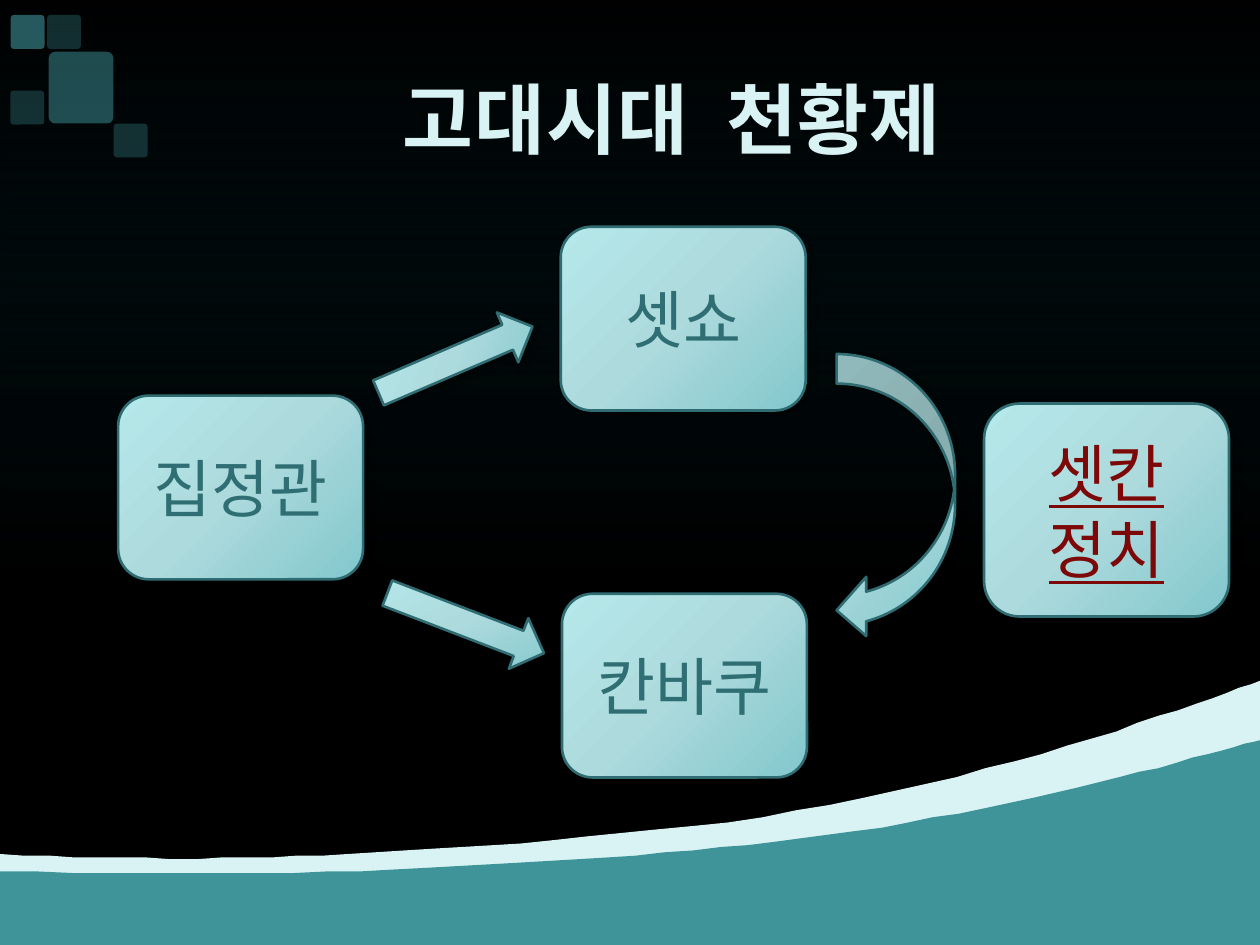
from typing import NamedTuple

from lxml import etree
from pptx import Presentation
from pptx.dml.color import RGBColor
from pptx.enum import shapes as sh, text as tx
from pptx.oxml import ns
from pptx.util import Pt

HUE = {
    "black": "000000", "deep": "005466", "pale": "D9F3F4", "teal": "3F949A",
    "light": "B5E8EA", "mid": "ACDADD", "dark": "82C7CC",
    "edge": "2F6D72", "ink": "2F6F74", "red": "7C0808",
}
KIND = sh.MSO_SHAPE
WIDE, HIGH = 720, 540
GLOSS = [(0, "light", 100), (50, "mid", 100), (100, "dark", 100)]


class Item(NamedTuple):
    kind: int
    x: float
    y: float
    w: float
    h: float
    turn: float = 0
    label: str = ""
    ink: str = "ink"


class Tile(NamedTuple):
    x: float
    y: float
    alpha: int
    w: float = 19.4
    h: float = 19.4


class Wave(NamedTuple):
    hue: str
    start: tuple
    curves: list


TILES = [
    Tile(26.9, 8.6, 30), Tile(5.9, 51.8, 30), Tile(6.1, 8.6, 60),
    Tile(65, 70.6, 30), Tile(27.8, 29.6, 50, 37, 41),
]
WAVES = [
    Wave("pale", (0, 488.2), [((115.9, 493.2), (211, 491), (375.1, 474.5)),
                              ((539.3, 457.9), (682.6, 402.5), (720, 388.8))]),
    Wave("teal", (0, 497.5), [((177.1, 503.3), (320.4, 493.9), (442.8, 481)),
                              ((564.5, 467.3), (690.5, 431.3), (720, 422.6))]),
]
BOX, ARROW = KIND.FLOWCHART_ALTERNATE_PROCESS, KIND.RIGHT_ARROW
ITEMS = [
    Item(BOX, 67.5, 226.1, 140, 105, label="집정관"),
    Item(ARROW, 212.4, 190.1, 95.8, 31, turn=336.7),
    Item(ARROW, 218.2, 340.6, 95.8, 31, turn=21),
    Item(BOX, 320.4, 129.6, 140, 105, label="셋쇼"),
    Item(BOX, 321.1, 339.3, 140, 105, label="칸바쿠"),
    Item(BOX, 562.3, 230.6, 140, 121.7, label="셋칸 정치", ink="red"),
    Item(KIND.CURVED_LEFT_ARROW, 478.1, 202.3, 67.7, 163.4),
]


def rgb(name: str) -> RGBColor:
    return RGBColor.from_string(HUE[name])


def sub(node, tag: str, **attrs):
    """Add a drawing element under a node."""
    return etree.SubElement(node, ns.qn(tag), {k: str(v) for k, v in attrs.items()})


def tint(node, name: str, alpha: int) -> None:
    clr = sub(node, "a:srgbClr", val=HUE[name])
    if alpha < 100:
        sub(clr, "a:alpha", val=alpha * 1000)


def blend(shape, stops: list, angle: int) -> None:
    """Fill a shape with a linear gradient of any number of stops."""
    shape.fill.gradient()
    grad = shape._element.spPr.find(ns.qn("a:gradFill"))
    for child in list(grad):
        grad.remove(child)
    group = sub(grad, "a:gsLst")
    for pos, name, alpha in stops:
        tint(sub(group, "a:gs", pos=pos * 1000), name, alpha)
    sub(grad, "a:lin", ang=angle * 60000, scaled=0)


def place(slide, kind: int, x: float, y: float, w: float, h: float):
    shape = slide.shapes.add_shape(kind, Pt(x), Pt(y), Pt(w), Pt(h))
    shape.shadow.inherit = False
    shape.line.fill.background()
    return shape


def solid(shape, name: str, alpha: int = 100) -> None:
    shape.fill.solid()
    shape.fill.fore_color.rgb = rgb(name)
    if alpha < 100:
        clr = shape._element.spPr.find(ns.qn("a:solidFill"))[0]
        sub(clr, "a:alpha", val=alpha * 1000)


def write(shape, label: str, size: int, face: str, ink: str):
    """Put one centred line of text in a shape and return its paragraph."""
    frame = shape.text_frame
    frame.word_wrap = True
    frame.vertical_anchor = tx.MSO_ANCHOR.MIDDLE
    para = frame.paragraphs[0]
    para.text = label
    para.alignment = tx.PP_ALIGN.CENTER
    font = para.font
    font.size, font.name = Pt(size), face
    font.color.rgb = rgb(ink)
    sub(para._p.pPr.find(ns.qn("a:defRPr")), "a:ea", typeface="Noto Sans CJK KR")
    return para


def draw_wave(slide, wave: Wave, steps: int = 24) -> None:
    pen = slide.shapes.build_freeform(*wave.start, scale=Pt(1))
    dots, last = [], wave.start
    for one, two, end in wave.curves:
        for i in range(1, steps + 1):
            t = i / steps
            s = 1 - t
            dots.append(tuple(s**3 * a + 3 * s * s * t * b + 3 * s * t * t * c + t**3 * d
                              for a, b, c, d in zip(last, one, two, end)))
        last = end
    pen.add_line_segments(dots + [(WIDE, HIGH), (0, HIGH)])
    shape = pen.convert_to_shape()
    shape.shadow.inherit = False
    shape.line.fill.background()
    solid(shape, wave.hue)


def draw_tile(slide, tile: Tile) -> None:
    shape = place(slide, KIND.ROUNDED_RECTANGLE, tile.x, tile.y, tile.w, tile.h)
    shape.adjustments[0] = 0.1
    solid(shape, "teal", tile.alpha)


def draw_item(slide, item: Item) -> None:
    shape = place(slide, item.kind, item.x, item.y, item.w, item.h)
    shape.rotation = item.turn
    blend(shape, GLOSS, 45)
    shape.line.color.rgb = rgb("edge")
    shape.line.width = Pt(1.5)
    glow = shape._element.spPr.find(ns.qn("a:effectLst"))
    tint(sub(glow, "a:outerShdw", blurRad=Pt(4), dist=Pt(3), dir=45 * 60000,
             algn="tl", rotWithShape=0), "black", 40)
    if item.label:
        para = write(shape, item.label, 36, "Noto Sans CJK KR", item.ink)
        if item.ink == "red":
            para.font.underline = True


def main() -> None:
    deck = Presentation()
    deck.slide_width, deck.slide_height = Pt(WIDE), Pt(HIGH)
    slide = deck.slides.add_slide(deck.slide_layouts[6])

    # Backdrop
    slide.background.fill.solid()
    slide.background.fill.fore_color.rgb = rgb("black")
    blend(place(slide, KIND.RECTANGLE, 0, 0, WIDE, HIGH),
          [(0, "deep", 0), (61, "black", 40)], 90)
    for wave in WAVES:
        draw_wave(slide, wave)
    for tile in TILES:
        draw_tile(slide, tile)

    # Title
    title = slide.shapes.add_textbox(Pt(90), Pt(28), Pt(588), Pt(78.5))
    para = write(title, "고대시대  천황제", 44, "Cambria", "pale")
    para.font.bold = True
    para._p.pPr.find(ns.qn("a:defRPr")).set("spc", "50")

    # Diagram
    for item in ITEMS:
        draw_item(slide, item)

    deck.save("out.pptx")


if __name__ == "__main__":
    main()
